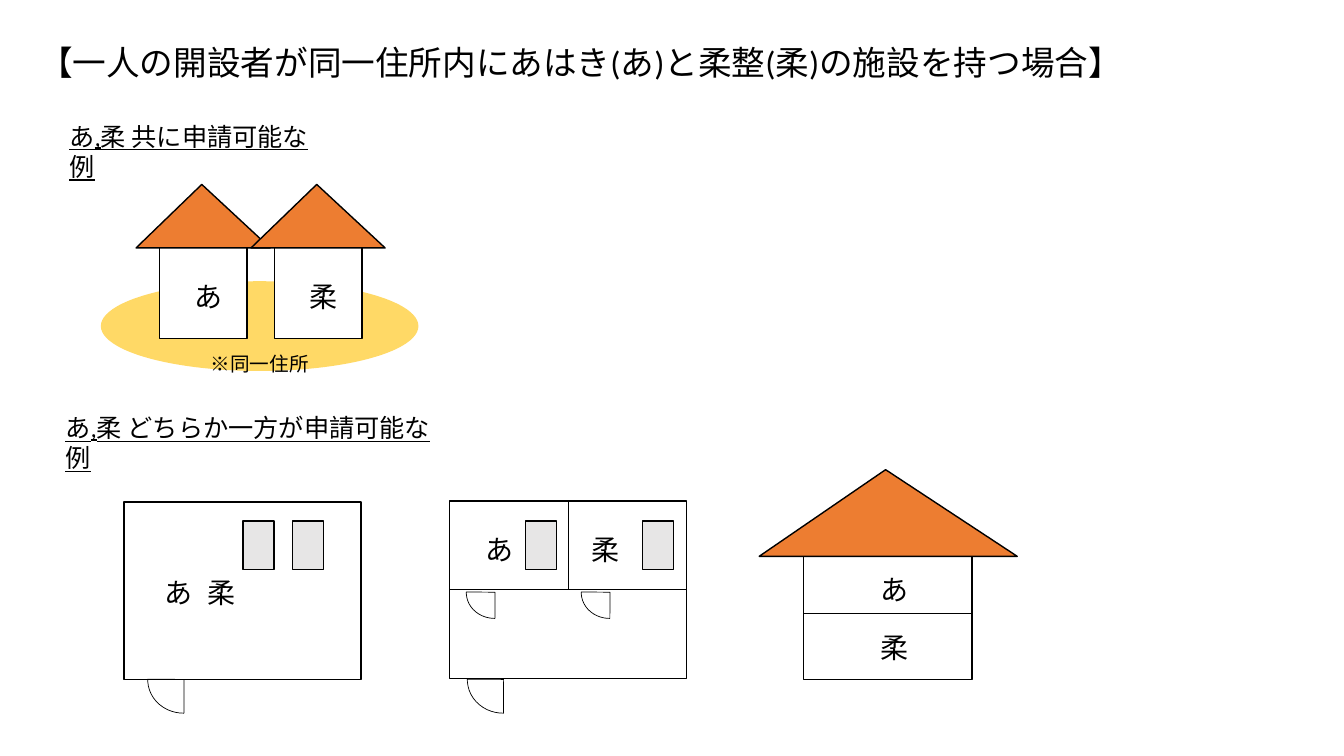
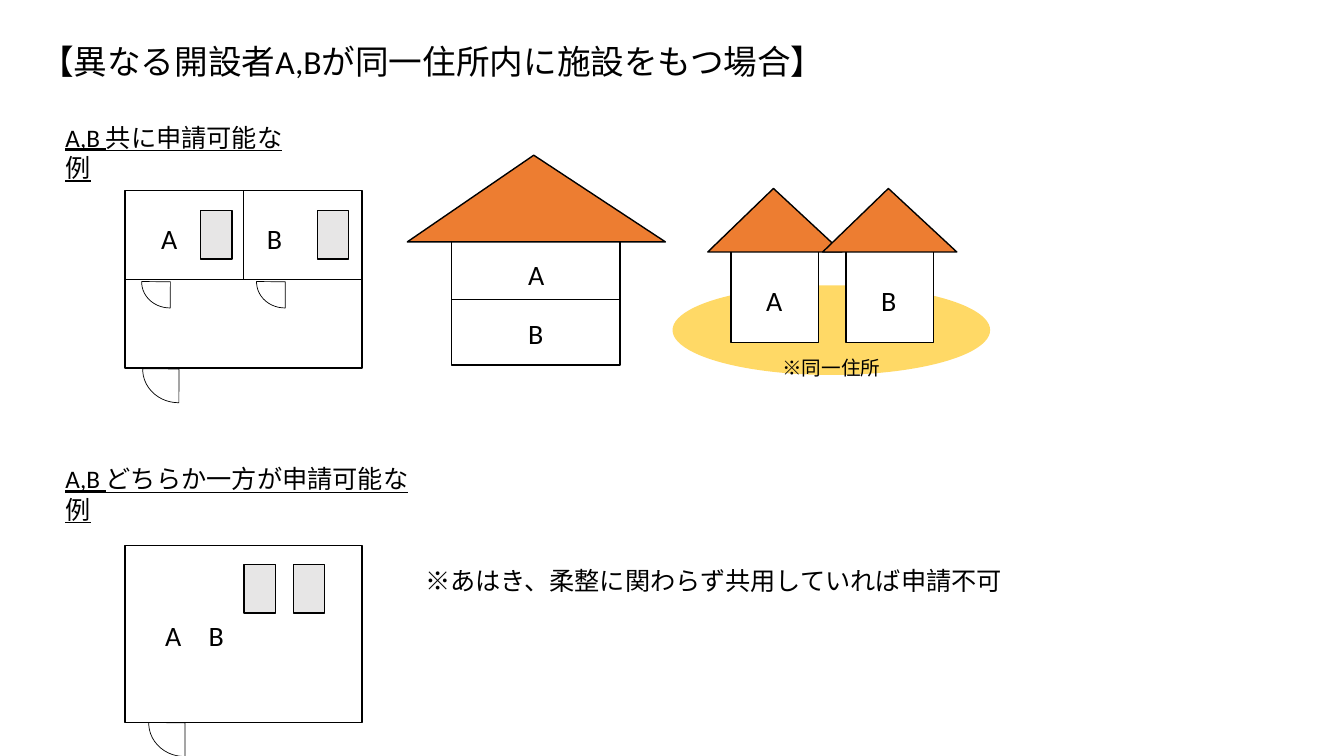
"""Build two slides showing which shared-address treatment facilities may apply."""
from dataclasses import dataclass
from typing import Callable

from lxml.etree import SubElement
from pptx import Presentation
from pptx.dml.color import RGBColor
from pptx.enum.shapes import MSO_CONNECTOR, MSO_SHAPE
from pptx.oxml.ns import qn
from pptx.shapes.autoshape import Shape
from pptx.shapes.connector import Connector
from pptx.slide import Slide
from pptx.util import Inches, Pt

BLACK = RGBColor(0x00, 0x00, 0x00)
WHITE = RGBColor(0xFF, 0xFF, 0xFF)
BED_GRAY = RGBColor(0xE7, 0xE6, 0xE6)
ROOF_ORANGE = RGBColor(0xED, 0x7D, 0x31)
GROUND_YELLOW = RGBColor(0xFF, 0xD9, 0x66)
FONT = "Calibri"

TITLE_SIZE, BODY_SIZE, LABEL_SIZE, NOTE_SIZE = 24, 18, 20, 14
OUTLINE, THIN = 1, 0.5
DOOR_ROTATION = 266.8
DOOR_ANGLES = (110.03, 164.12)
ROOF_PEAK = 0.49
PLAN_WIDTH, PLAN_HEIGHT = 2.35, 1.76
HOUSE_PITCH = 1.14


@dataclass(frozen=True)
class Box:
    left: float
    top: float
    width: float
    height: float


@dataclass(frozen=True)
class TextItem:
    text: str
    box: Box
    size: int = BODY_SIZE
    underline: bool = False


@dataclass(frozen=True)
class Drawing:
    draw: Callable[[Slide, float, float, str], None]
    left: float
    top: float


@dataclass(frozen=True)
class SlideContent:
    names: str
    drawings: list[Drawing]
    texts: list[TextItem]


def add_text(slide: Slide, item: TextItem) -> None:
    box = item.box
    shape = slide.shapes.add_textbox(
        Inches(box.left), Inches(box.top), Inches(box.width), Inches(box.height)
    )
    text_frame = shape.text_frame
    text_frame.word_wrap = True
    text_frame.text = item.text
    font = text_frame.paragraphs[0].runs[0].font
    font.name = FONT
    font.size = Pt(item.size)
    font.underline = item.underline
    font.color.rgb = BLACK


def add_label(slide: Slide, name: str, left: float, top: float) -> None:
    add_text(slide, TextItem(name, Box(left, top, 0.37, 0.44), LABEL_SIZE))


def add_figure(
    slide: Slide,
    kind: MSO_SHAPE,
    box: Box,
    fill: RGBColor | None = None,
    line_width: float = OUTLINE,
) -> Shape:
    shape = slide.shapes.add_shape(
        kind, Inches(box.left), Inches(box.top), Inches(box.width), Inches(box.height)
    )
    shape.shadow.inherit = False
    if fill is None:
        shape.fill.background()
    else:
        shape.fill.solid()
        shape.fill.fore_color.rgb = fill
    if line_width:
        shape.line.color.rgb = BLACK
        shape.line.width = Pt(line_width)
    else:
        shape.line.fill.background()
    return shape


def add_line(
    slide: Slide, left: float, top: float, right: float, bottom: float
) -> Connector:
    connector = slide.shapes.add_connector(
        MSO_CONNECTOR.STRAIGHT, Inches(left), Inches(top), Inches(right), Inches(bottom)
    )
    connector.line.color.rgb = BLACK
    connector.line.width = Pt(THIN)
    SubElement(connector._element.spPr, qn("a:effectLst"))
    return connector


def add_middle_line(slide: Slide, shape: Shape, box: Box) -> None:
    middle = box.top + box.height / 2
    connector = add_line(slide, box.left, middle, box.left + box.width, middle)
    connector.begin_connect(shape, 1)
    connector.end_connect(shape, 3)


def add_door(slide: Slide, box: Box) -> None:
    door = add_figure(slide, MSO_SHAPE.PIE, box, line_width=THIN)
    door.adjustments[0], door.adjustments[1] = DOOR_ANGLES
    door.rotation = DOOR_ROTATION


def add_entrance(slide: Slide, left: float, top: float) -> None:
    add_door(slide, Box(left, top, 0.67, 0.72))


def add_bed(slide: Slide, left: float, top: float) -> None:
    add_figure(slide, MSO_SHAPE.RECTANGLE, Box(left, top, 0.31, 0.48), BED_GRAY)


def add_roof(slide: Slide, box: Box) -> None:
    roof = add_figure(slide, MSO_SHAPE.ISOSCELES_TRIANGLE, box, ROOF_ORANGE)
    roof.adjustments[0] = ROOF_PEAK


def draw_divided_plan(slide: Slide, left: float, top: float, names: str) -> None:
    box = Box(left, top, PLAN_WIDTH, PLAN_HEIGHT)
    plan = add_figure(slide, MSO_SHAPE.RECTANGLE, box)
    add_middle_line(slide, plan, box)
    center = left + PLAN_WIDTH / 2
    wall = add_line(slide, center, top, center, top + PLAN_HEIGHT / 2)
    wall.begin_connect(plan, 0)
    add_entrance(slide, left + 0.2, top + 1.41)
    for name, bed, door, label in zip(names, (0.75, 1.91), (0.19, 1.33), (0.26, 1.31)):
        add_bed(slide, left + bed, top + 0.2)
        add_door(slide, Box(left + door, top + 0.62, 0.52, 0.57))
        add_label(slide, name, left + label, top + 0.26)


def draw_shared_plan(slide: Slide, left: float, top: float, names: str) -> None:
    add_figure(slide, MSO_SHAPE.RECTANGLE, Box(left, top, PLAN_WIDTH, PLAN_HEIGHT))
    add_entrance(slide, left + 0.26, top + 1.4)
    for name, bed, label in zip(names, (1.18, 1.67), (0.3, 0.73)):
        add_bed(slide, left + bed, top + 0.19)
        add_label(slide, name, left + label, top + 0.68)


def draw_twin_houses(slide: Slide, left: float, top: float, names: str) -> None:
    add_figure(slide, MSO_SHAPE.OVAL, Box(left, top, 3.15, 0.89), GROUND_YELLOW, 0)
    for index, name in enumerate(names):
        house = left + index * HOUSE_PITCH
        walls = Box(house + 0.58, top - 0.39, 0.87, 0.96)
        add_figure(slide, MSO_SHAPE.RECTANGLE, walls, WHITE)
        add_roof(slide, Box(house + 0.35, top - 0.96, 1.33, 0.63))
        add_label(slide, name, house + 0.83, top - 0.07)
    note = Box(left + 0.99, top + 0.65, 1.36, 0.34)
    add_text(slide, TextItem("※同一住所", note, NOTE_SIZE))


def draw_two_storey_house(slide: Slide, left: float, top: float, names: str) -> None:
    box = Box(left, top, 1.67, 1.31)
    walls = add_figure(slide, MSO_SHAPE.RECTANGLE, box, WHITE)
    add_roof(slide, Box(left - 0.44, top - 0.77, 2.56, 0.86))
    add_middle_line(slide, walls, box)
    for index, name in enumerate(names):
        add_label(slide, name, left + 0.66, top + 0.2 + index * 0.58)


SLIDES = [
    SlideContent(
        "あ柔",
        [
            Drawing(draw_divided_plan, 4.46, 4.97),
            Drawing(draw_shared_plan, 1.23, 4.98),
            Drawing(draw_twin_houses, 1, 2.79),
            Drawing(draw_two_storey_house, 7.97, 5.43),
        ],
        [
            TextItem(
                "【一人の開設者が同一住所内にあはき(あ)と柔整(柔)の施設を持つ場合】",
                Box(0.29, 0.37, 12.2, 0.5),
                TITLE_SIZE,
            ),
            TextItem("あ,柔 共に申請可能な例", Box(0.59, 1.15, 2.8, 0.4), underline=True),
            TextItem(
                "あ,柔 どちらか一方が申請可能な例", Box(0.55, 4.04, 4.05, 0.4), underline=True
            ),
        ],
    ),
    SlideContent(
        "AB",
        [
            Drawing(draw_divided_plan, 1.24, 1.89),
            Drawing(draw_shared_plan, 1.24, 5.41),
            Drawing(draw_twin_houses, 6.67, 2.83),
            Drawing(draw_two_storey_house, 4.48, 2.31),
        ],
        [
            TextItem(
                "【異なる開設者A,Bが同一住所内に施設をもつ場合】",
                Box(0.3, 0.36, 9.7, 0.5),
                TITLE_SIZE,
            ),
            TextItem("A,B 共に申請可能な例", Box(0.55, 1.16, 2.55, 0.4), underline=True),
            TextItem(
                "A,B どちらか一方が申請可能な例", Box(0.55, 4.55, 3.8, 0.4), underline=True
            ),
            TextItem(
                "※あはき、柔整に関わらず共用していれば申請不可", Box(4.12, 5.56, 6.32, 0.4)
            ),
        ],
    ),
]


def main() -> None:
    presentation = Presentation()
    presentation.slide_width = Inches(13.33)
    presentation.slide_height = Inches(7.5)
    for content in SLIDES:
        slide = presentation.slides.add_slide(presentation.slide_layouts[6])
        for drawing in content.drawings:
            drawing.draw(slide, drawing.left, drawing.top, content.names)
        for item in content.texts:
            add_text(slide, item)
    presentation.save("out.pptx")


if __name__ == "__main__":
    main()
